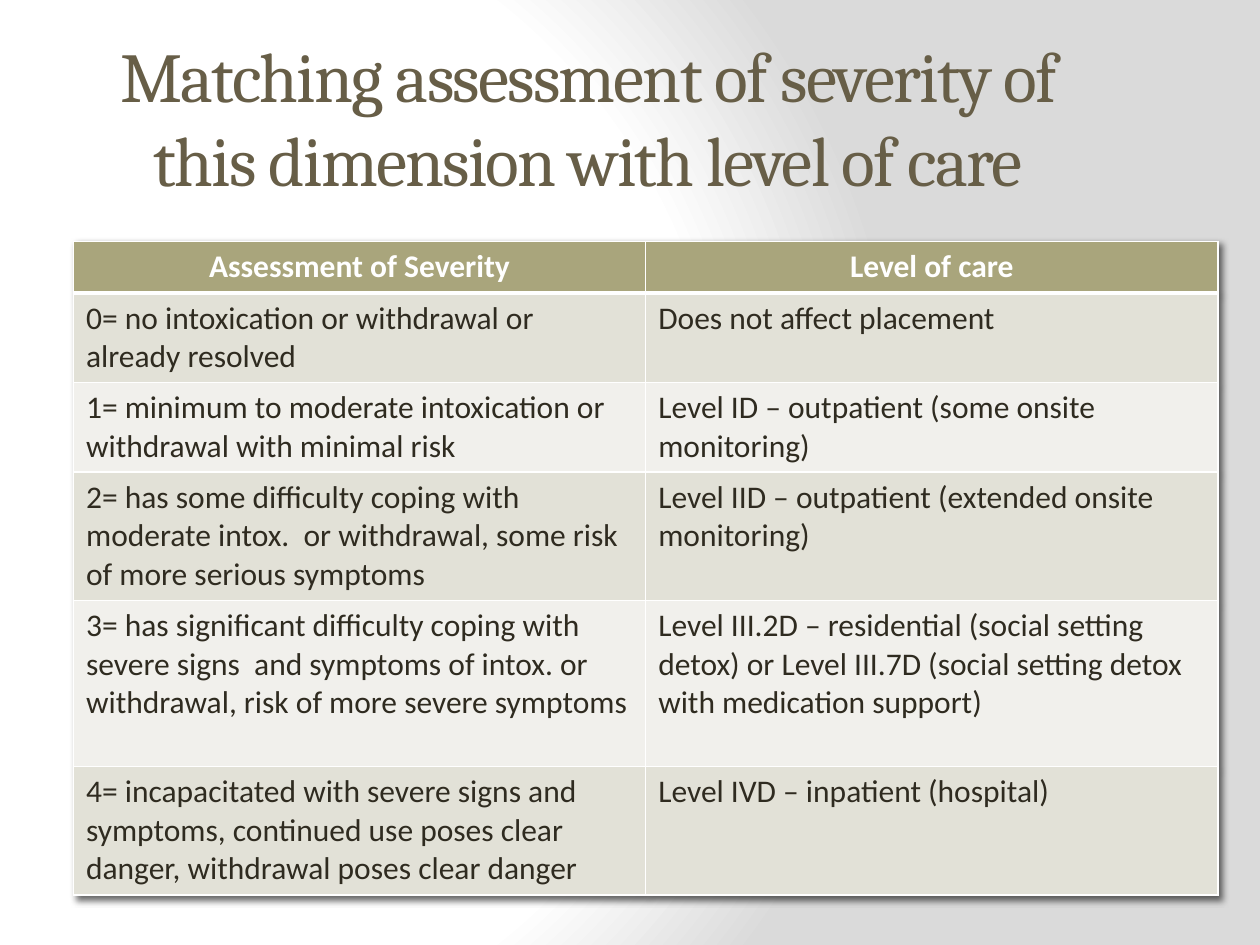
import pptx
import pptx.util
import pptx.oxml
import pptx.dml.color
import pptx.enum.text

Pt = pptx.util.Pt
Align = pptx.enum.text.PP_ALIGN
Anchor = pptx.enum.text.MSO_ANCHOR

TITLE = "Matching assessment of severity of this dimension with level of care"
ROWS = [
    (29.5, "Assessment of Severity", "Level of care"),
    (51.1, "0= no intoxication or withdrawal or already resolved",
     "Does not affect placement"),
    (51.1, "1= minimum to moderate intoxication or withdrawal with minimal risk",
     "Level ID – outpatient (some onsite monitoring)"),
    (73.4, "2= has some difficulty coping with moderate intox.  or withdrawal, "
     "some risk of more serious symptoms",
     "Level IID – outpatient (extended onsite monitoring)"),
    (95, "3= has significant difficulty coping with severe signs  and symptoms "
     "of intox. or withdrawal, risk of more severe symptoms",
     "Level III.2D – residential (social setting detox) or Level III.7D "
     "(social setting detox with medication support)"),
    (73.4, "4= incapacitated with severe signs and symptoms, continued use poses "
     "clear danger, withdrawal poses clear danger",
     "Level IVD – inpatient (hospital)"),
]
THEME = {
    "title": {"size": 40, "font": "Cambria", "color": "675E47",
              "align": Align.CENTER, "track": -100},
    "head": {"size": 18, "font": "Calibri", "color": "FFFFFF",
             "align": Align.CENTER, "bold": True},
    "body": {"size": 18, "font": "Calibri", "color": "2F2B20"},
    "fills": {"head": "A9A57C", "odd": "E2E1D7", "even": "F1F0EC"},
    "line": "FFFFFF",
    "back": [(0, "FFFFFF"), (75, "FFFFFF"), (100, "DADADA")],
}
NS = 'xmlns:a="http://schemas.openxmlformats.org/drawingml/2006/main"'
WIDE = 327


def rgb(code):
    return pptx.dml.color.RGBColor.from_string(code)


def write(frame, text, size, font, color, align=Align.LEFT, bold=False, track=None):
    para = frame.paragraphs[0]
    para.alignment = align
    run = para.add_run()
    run.text = text
    run.font.size = Pt(size)
    run.font.name = font
    run.font.bold = bold
    run.font.color.rgb = rgb(color)
    if track:
        run.font._element.set("spc", str(track))


def shade(slide):
    fill = slide.background.fill
    fill.gradient()
    old = slide.element.cSld.bg.bgPr[0]
    stops = "".join(
        f'<a:gs pos="{pos * 1000}"><a:srgbClr val="{code}"/></a:gs>'
        for pos, code in THEME["back"])
    new = pptx.oxml.parse_xml(
        f'<a:gradFill {NS} rotWithShape="1"><a:gsLst>{stops}</a:gsLst>'
        '<a:path path="circle"><a:fillToRect l="20000" t="50000" '
        'r="100000" b="50000"/></a:path></a:gradFill>')
    old.getparent().replace(old, new)


def border(cell, row):
    heavy = {(0, "B"), (1, "T")}
    props = cell._tc.get_or_add_tcPr()
    for spot, side in enumerate("LRTB"):
        width = Pt(3 if (row, side) in heavy else 1)
        props.insert(spot, pptx.oxml.parse_xml(
            f'<a:ln{side} {NS} w="{width}"><a:solidFill>'
            f'<a:srgbClr val="{THEME["line"]}"/></a:solidFill></a:ln{side}>'))


def grid(slide):
    high = sum(row[0] for row in ROWS)
    table = slide.shapes.add_table(
        len(ROWS), 2, Pt(42), Pt(138), Pt(2 * WIDE), Pt(high)).table
    table._tbl.tblPr.insert(0, pptx.oxml.parse_xml(
        f'<a:effectLst {NS}><a:outerShdw blurRad="50800" dist="38100" '
        'dir="2700000" algn="tl" rotWithShape="0"><a:srgbClr val="000000">'
        '<a:alpha val="60000"/></a:srgbClr></a:outerShdw></a:effectLst>'))
    for col in table.columns:
        col.width = Pt(WIDE)
    for num, (tall, *texts) in enumerate(ROWS):
        table.rows[num].height = Pt(tall)
        style = "body" if num else "head"
        band = ("odd" if num % 2 else "even") if num else "head"
        for col, text in enumerate(texts):
            cell = table.cell(num, col)
            cell.fill.solid()
            cell.fill.fore_color.rgb = rgb(THEME["fills"][band])
            border(cell, num)
            write(cell.text_frame, text, **THEME[style])


def main():
    deck = pptx.Presentation()
    deck.slide_width, deck.slide_height = Pt(720), Pt(540)
    slide = deck.slides.add_slide(deck.slide_layouts[6])
    shade(slide)
    frame = slide.shapes.add_textbox(Pt(36), Pt(21.6), Pt(600), Pt(90)).text_frame
    frame.word_wrap = True
    frame.vertical_anchor = Anchor.MIDDLE
    write(frame, TITLE, **THEME["title"])
    grid(slide)
    deck.save("out.pptx")


if __name__ == "__main__":
    main()
